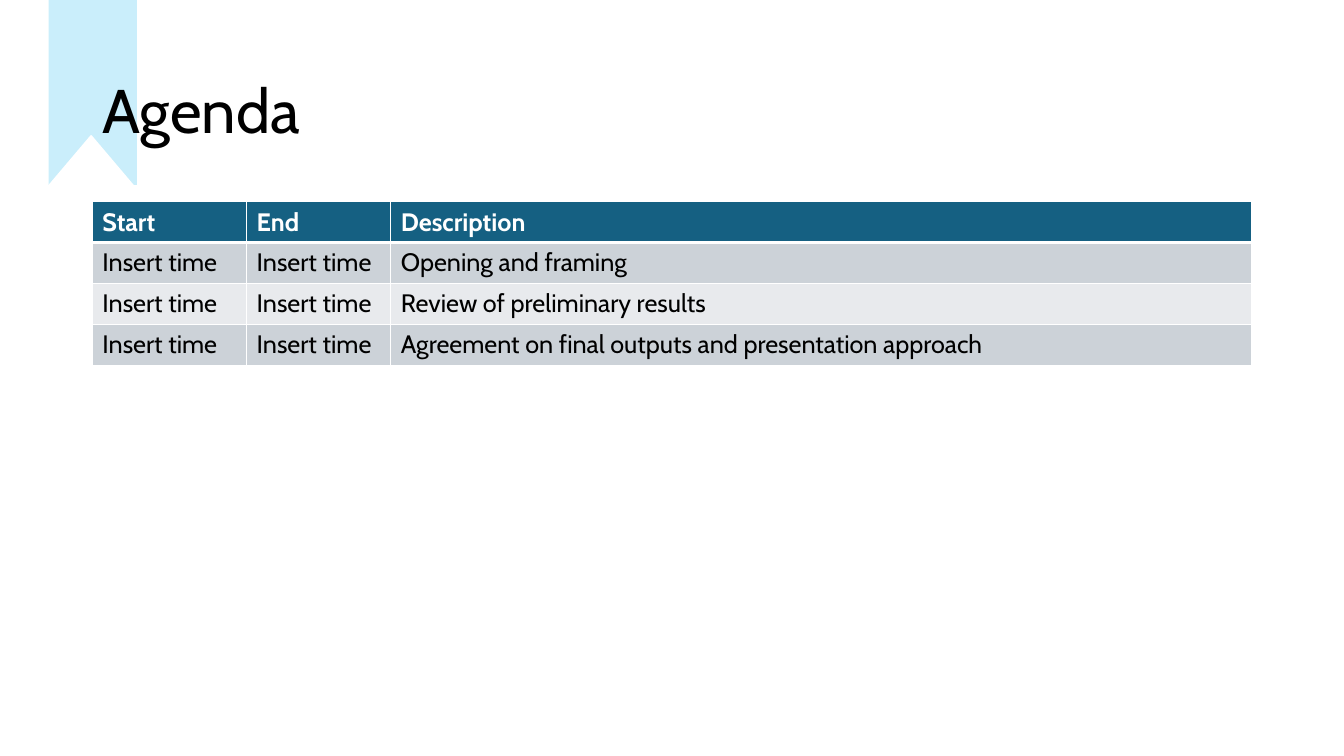
import pptx
import pptx.dml.color
import pptx.enum.shapes
import pptx.enum.text
import pptx.oxml
import pptx.oxml.ns
import pptx.util

Pt = pptx.util.Pt
SHAPE = pptx.enum.shapes.MSO_SHAPE
MIDDLE = pptx.enum.text.MSO_ANCHOR.MIDDLE

theme = {
    "font": "Cabin",
    "title_size": 44,
    "table_size": 18,
    "text": "000000",
    "white": "FFFFFF",
    "header": "156082",
    "bands": ["CCD2D8", "E8EAED"],
    "ribbon": "CAEEFB",
}


def rgb(value):
    return pptx.dml.color.RGBColor.from_string(value)


def write(paragraph, text, color, **formats):
    paragraph.text = text
    font = paragraph.runs[0].font
    for name, value in {"name": theme["font"], **formats}.items():
        setattr(font, name, value)
    font.color.rgb = rgb(color)


deck = pptx.Presentation()
deck.slide_width, deck.slide_height = Pt(960), Pt(540)
slide = deck.slides.add_slide(deck.slide_layouts[6])

# Agenda table
agenda = [
    ["Start", "End", "Description"],
    ["Insert time", "Insert time", "Opening and framing"],
    ["Insert time", "Insert time", "Review of preliminary results"],
    ["Insert time", "Insert time", "Agreement on final outputs and presentation approach"],
]
column_widths = [110.2, 103, 614.8]
row_height = 29.2
schedule = slide.shapes.add_table(
    len(agenda), len(column_widths), Pt(66), Pt(144),
    Pt(sum(column_widths)), Pt(row_height * len(agenda))).table
for column, width in zip(schedule.columns, column_widths):
    column.width = Pt(width)

for row_index, entries in enumerate(agenda):
    schedule.rows[row_index].height = Pt(row_height)
    is_header = row_index == 0
    fill = theme["header"] if is_header else theme["bands"][(row_index - 1) % 2]
    # The rule under the header is thicker than the other borders
    borders = {"lnL": 1, "lnR": 1,
               "lnT": 3 if row_index == 1 else 1,
               "lnB": 3 if is_header else 1}
    for column_index, entry in enumerate(entries):
        cell = schedule.cell(row_index, column_index)
        properties = cell._tc.get_or_add_tcPr()
        for side, weight in borders.items():
            properties.append(pptx.oxml.parse_xml(
                f'<a:{side} {pptx.oxml.ns.nsdecls("a")} w="{Pt(weight)}">'
                f'<a:solidFill><a:srgbClr val="{theme["white"]}"/></a:solidFill>'
                f'</a:{side}>'))
        cell.fill.solid()
        cell.fill.fore_color.rgb = rgb(fill)
        write(cell.text_frame.paragraphs[0], entry,
              theme["white"] if is_header else theme["text"],
              size=Pt(theme["table_size"]), bold=is_header)

# Bookmark ribbon with a notch cut by a white triangle
ribbon_parts = [
    (SHAPE.RECTANGLE, (34.7, 0, 63.2, 132), theme["ribbon"], None),
    (SHAPE.ISOSCELES_TRIANGLE, (29.1, 97.3, 72, 42.5), theme["white"], 1.5),
]
for kind, bounds, color, outline in ribbon_parts:
    part = slide.shapes.add_shape(kind, *map(Pt, bounds))
    part.shadow.inherit = False
    part.fill.solid()
    part.fill.fore_color.rgb = rgb(color)
    if outline:
        part.line.color.rgb = rgb(color)
        part.line.width = Pt(outline)
    else:
        part.line.fill.background()

# Title
heading = slide.shapes.add_textbox(Pt(66), Pt(28.75), Pt(828), Pt(104.4)).text_frame
heading.word_wrap = True
heading.vertical_anchor = MIDDLE
heading.paragraphs[0].line_spacing = 0.9
write(heading.paragraphs[0], "Agenda", theme["text"], size=Pt(theme["title_size"]))

deck.save("out.pptx")
